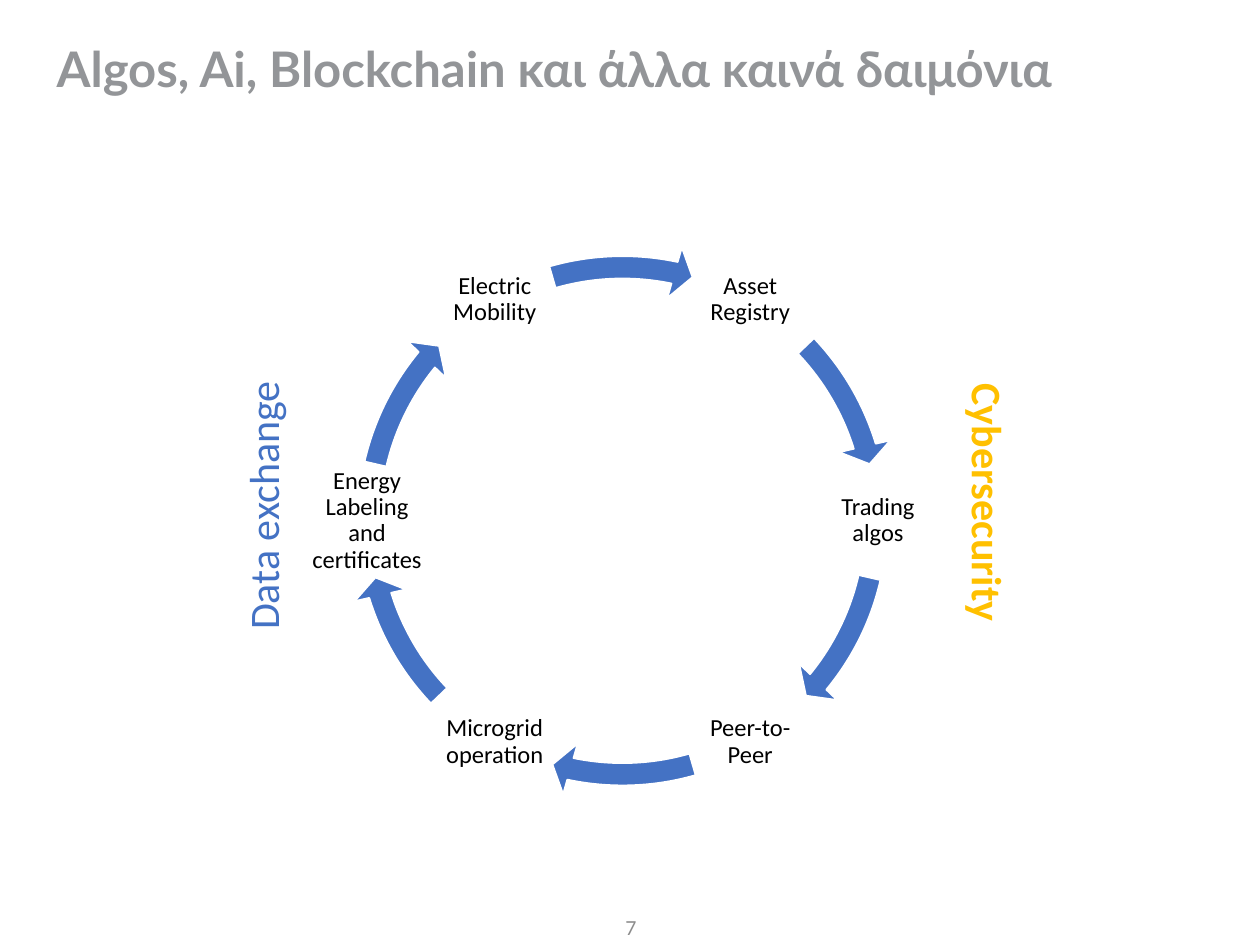
from dataclasses import dataclass
from math import cos, radians, sin

from pptx import Presentation
from pptx.dml.color import RGBColor as RGB
from pptx.enum.shapes import MSO_SHAPE as Shape
from pptx.enum.text import MSO_ANCHOR as Anchor, MSO_AUTO_SIZE as Fit, PP_ALIGN as Align
from pptx.util import Cm, Pt


@dataclass(frozen=True)
class Theme:
    head: str = "Lato"
    body: str = "Calibri"
    title: RGB = RGB(0x93, 0x95, 0x98)
    page: RGB = RGB(0x8C, 0x8C, 0x8C)
    ink: RGB = RGB(0, 0, 0)
    blue: RGB = RGB(0x44, 0x72, 0xC4)
    gold: RGB = RGB(0xFF, 0xC0, 0x00)
    white: RGB = RGB(0xFF, 0xFF, 0xFF)
    big: int = 28
    side: int = 24
    node: int = 14
    small: int = 11


T = Theme()

# Ring geometry in centimetres, angles in degrees clockwise from the right
MID_X, MID_Y, RADIUS = 12.55, 10.5, 5.15
RING, BOX = 11.28, 2.34
NODES = ["Asset Registry", "Trading algos", "Peer-to-Peer", "Microgrid operation",
         "Energy Labeling and certificates", "Electric Mobility"]
# Start and end of three arrows; the other three are half a turn on
SPANS = [(316.37, 342.9), (12.94, 39.46), (73.97, 101.86)]


def style(box, text, font, size, color, bold=False, align=Align.LEFT, anchor=Anchor.TOP):
    frame = box.text_frame
    frame.word_wrap = True
    frame.auto_size = Fit.NONE
    frame.vertical_anchor = anchor
    frame.text = text
    par = frame.paragraphs[0]
    par.alignment = align
    par.font.name = font
    par.font.size = Pt(size)
    par.font.bold = bold
    par.font.color.rgb = color
    return par


def add_title(slide, text):
    box = slide.shapes.title
    box.left, box.top, box.width, box.height = Cm(0.89), Cm(0.79), Cm(23.29), Cm(1.35)
    par = style(box, text, T.head, T.big, T.title, bold=True)
    par.line_spacing = 0.9


def add_node(group, text, angle):
    x = MID_X + RADIUS * cos(radians(angle)) - BOX / 2
    y = MID_Y + RADIUS * sin(radians(angle)) - BOX / 2
    box = group.shapes.add_textbox(Cm(x), Cm(y), Cm(BOX), Cm(BOX))
    par = style(box, text, T.body, T.node, T.ink, align=Align.CENTER, anchor=Anchor.MIDDLE)
    par.line_spacing = 0.9
    # No side margins, so the longest word stays on one line
    frame = box.text_frame
    frame.margin_left = frame.margin_right = Cm(0)
    frame.margin_top = frame.margin_bottom = Cm(0.05)


def add_arrow(group, start, end):
    arrow = group.shapes.add_shape(Shape.CIRCULAR_ARROW, Cm(MID_X - RING / 2),
                                   Cm(MID_Y - RING / 2), Cm(RING), Cm(RING))
    arrow.shadow.inherit = False
    arrow.fill.solid()
    arrow.fill.fore_color.rgb = T.blue
    arrow.line.color.rgb = T.white
    arrow.line.width = Pt(1)
    # One degree is 0.6 adjustment units
    values = [0.04, 4.17 * 0.6, end * 0.6, start * 0.6, 0.047]
    for i, value in enumerate(values):
        arrow.adjustments[i] = value


def add_cycle(slide):
    group = slide.shapes.add_group_shape()
    for i, text in enumerate(NODES):
        add_node(group, text, 60 * (i - 1))
        half, k = divmod(i, len(SPANS))
        start, end = [(angle + 180 * half) % 360 for angle in SPANS[k]]
        add_arrow(group, start, end)


def add_side(slide, text, x, y, width, turn, color, bold=False):
    box = slide.shapes.add_textbox(Cm(x), Cm(y), Cm(width), Cm(1.28))
    box.rotation = turn
    style(box, text, T.body, T.side, color, bold)


def add_page(slide, text):
    box = slide.shapes.add_textbox(Cm(9.86), Cm(18.44), Cm(5.72), Cm(0.51))
    style(box, text, T.head, T.small, T.page, align=Align.CENTER, anchor=Anchor.MIDDLE)


def main():
    deck = Presentation()
    deck.slide_width, deck.slide_height = Cm(25.4), Cm(19.05)
    slide = deck.slides.add_slide(deck.slide_layouts[5])

    # Title and page number
    add_title(slide, "Algos, Ai, Blockchain και άλλα καινά δαιμόνια")
    add_page(slide, "7")

    # Cycle of topics
    add_cycle(slide)

    # Upright labels on both sides
    add_side(slide, "Data exchange", 2.41, 9.42, 5.77, 270, T.blue)
    add_side(slide, "Cybersecurity", 16.94, 9.83, 5.97, 90, T.gold, bold=True)

    deck.save("out.pptx")


if __name__ == "__main__":
    main()
